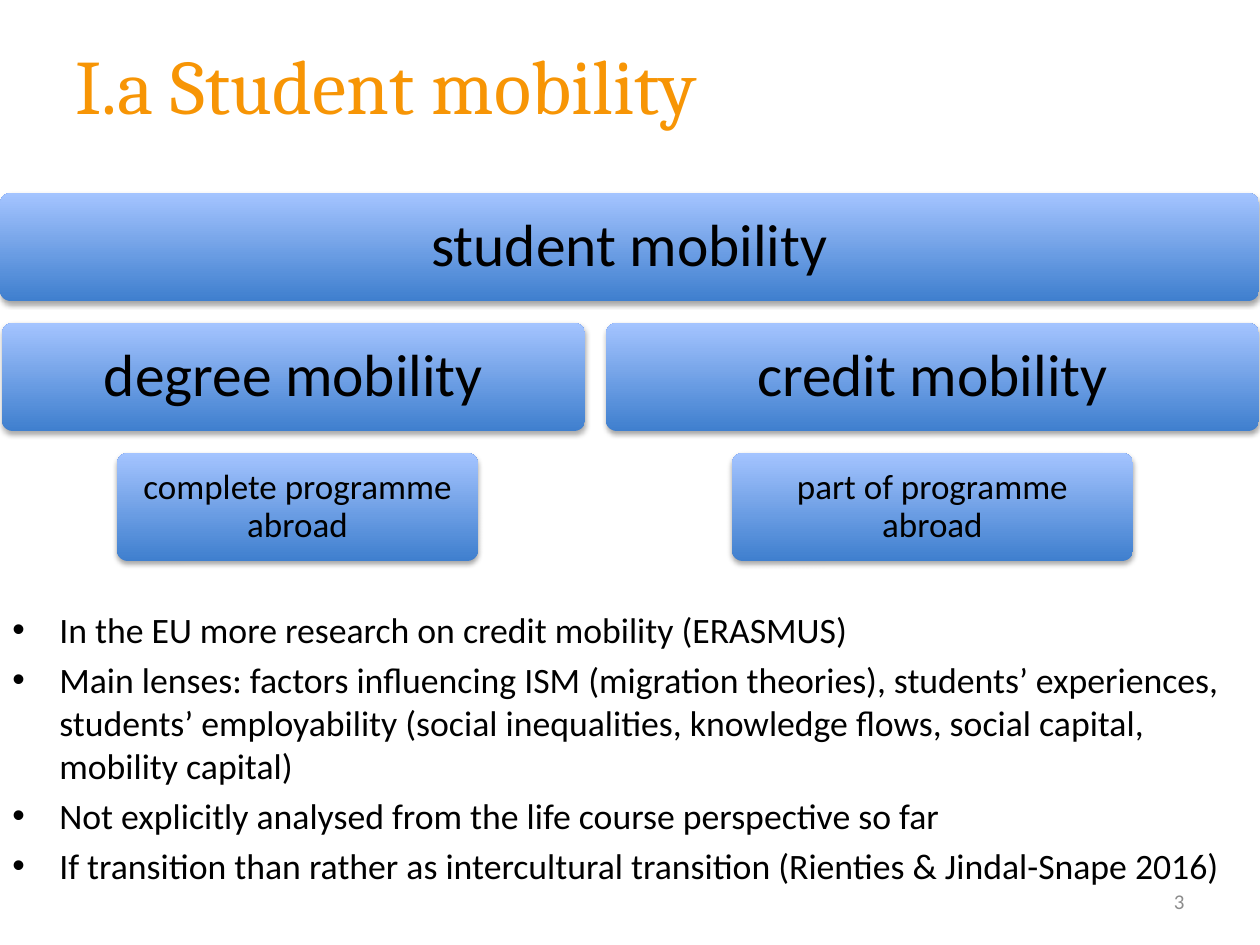
from lxml import etree
from pptx import Presentation
from pptx.dml.color import RGBColor
from pptx.enum.shapes import MSO_SHAPE
from pptx.enum.text import MSO_ANCHOR, PP_ALIGN
from pptx.oxml import parse_xml
from pptx.oxml.ns import nsdecls, qn
from pptx.util import Emu, Pt

ROUNDED = MSO_SHAPE.ROUNDED_RECTANGLE
MIDDLE, TOP = MSO_ANCHOR.MIDDLE, MSO_ANCHOR.TOP
LEFT, CENTER, RIGHT = PP_ALIGN.LEFT, PP_ALIGN.CENTER, PP_ALIGN.RIGHT

EMU_PER_PX = 914400 / 126
COLORS = {"title": "F79505", "text": "000000", "number": "8C8C8C",
          "box_bottom": "3F7FCE", "box_top": "A4C4FF", "shadow": "000000"}

ROW_TOP, ROW_STEP, BOX_HEIGHT = 193, 130, 108
LARGE, SMALL = (34, 18), (20, 10)  # text size in points, inset in px
BOXES = [  # row, left, width, style, text
    (0, 0, 1259, LARGE, "student mobility"),
    (1, 2, 583, LARGE, "degree mobility"),
    (2, 117, 361, SMALL, "complete programme abroad"),
    (1, 606, 653, LARGE, "credit mobility"),
    (2, 732, 401, SMALL, "part of programme abroad"),
]
BULLETS = [
    "In the EU more research on credit mobility (ERASMUS)",
    "Main lenses: factors influencing ISM (migration theories), students’ experiences, "
    "students’ employability (social inequalities, knowledge flows, social capital, "
    "mobility capital)",
    "Not explicitly analysed from the life course perspective so far",
    "If transition than rather as intercultural transition (Rienties & Jindal-Snape 2016)",
]


def px(length):
    return Emu(round(length * EMU_PER_PX))


def color(name):
    return RGBColor.from_string(COLORS[name])


def format_text(frame, size, color_name, align=LEFT, anchor=MIDDLE, font="Calibri"):
    frame.word_wrap = True
    frame.vertical_anchor = anchor
    for para in frame.paragraphs:
        para.alignment = align
        for span in para.runs:
            span.font.size = Pt(size)
            span.font.name = font
            span.font.color.rgb = color(color_name)


def add_text(slide, bounds, text, *style, **options):
    frame = slide.shapes.add_textbox(*map(px, bounds)).text_frame
    frame.text = text
    format_text(frame, *style, **options)
    return frame


def add_bullets(frame):
    """Give every paragraph a hanging bullet."""
    for para in frame.paragraphs:
        para.space_before = Pt(4)
        properties = para._p.get_or_add_pPr()
        properties.set("marL", str(px(47)))
        properties.set("indent", str(px(-47)))
        font = etree.SubElement(properties, qn("a:buFont"))
        font.set("typeface", "Arial")
        etree.SubElement(properties, qn("a:buChar")).set("char", "•")


def add_shadow(shape):
    shape.shadow.inherit = False
    effects = shape._element.spPr.find(qn("a:effectLst"))
    effects.append(parse_xml(
        f'<a:outerShdw {nsdecls("a")} blurRad="{Pt(3.1)}" dist="{Pt(1.8)}" '
        f'dir="5400000" rotWithShape="0"><a:srgbClr val="{COLORS["shadow"]}">'
        '<a:alpha val="35000"/></a:srgbClr></a:outerShdw>'))


def add_box(slide, row, left, width, style, text):
    size, inset = style
    bounds = (left, ROW_TOP + row * ROW_STEP, width, BOX_HEIGHT)
    box = slide.shapes.add_shape(ROUNDED, *map(px, bounds))
    box.adjustments[0] = 0.1
    box.line.fill.background()
    box.fill.gradient()
    box.fill.gradient_angle = 90
    for stop, name in zip(box.fill.gradient_stops, ("box_bottom", "box_top")):
        stop.color.rgb = color(name)
    add_shadow(box)
    frame = box.text_frame
    frame.text = text
    frame.margin_left = frame.margin_right = px(inset)
    frame.margin_top = frame.margin_bottom = px(inset)
    format_text(frame, size, "text", align=CENTER)
    frame.paragraphs[0].line_spacing = 0.9


def main():
    deck = Presentation()
    deck.slide_width, deck.slide_height = px(1260), px(945)
    slide = deck.slides.add_slide(deck.slide_layouts[6])
    add_text(slide, (63, 5, 1134, 158), "I.a Student mobility", 44, "title", font="Cambria")
    body = add_text(slide, (0, 602, 1260, 281), "\n".join(BULLETS), 20.4, "text", anchor=TOP)
    add_bullets(body)
    add_text(slide, (903, 876, 294, 50), "3", 12, "number", align=RIGHT)
    for box in BOXES:
        add_box(slide, *box)
    deck.save("out.pptx")


if __name__ == "__main__":
    main()
